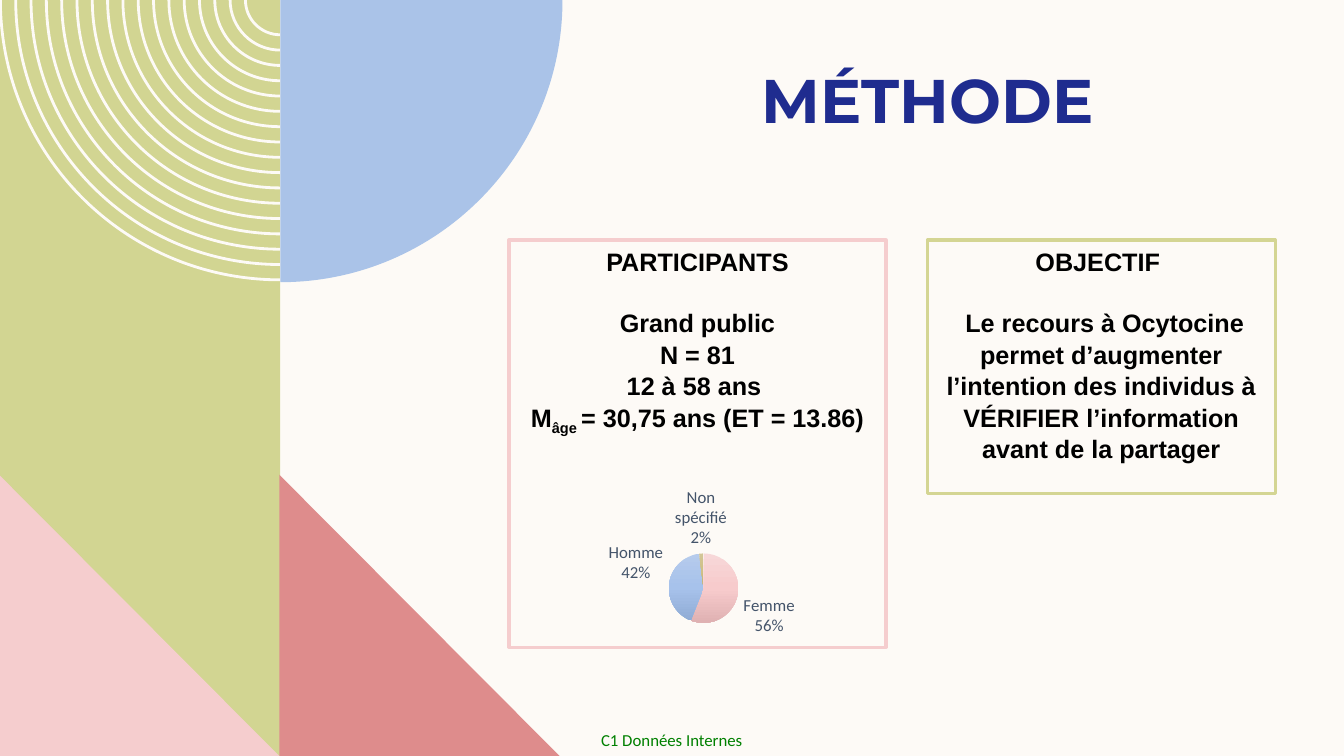
from copy import deepcopy
from dataclasses import dataclass

from lxml.etree import SubElement
from pptx import Presentation
from pptx.chart.data import CategoryChartData
from pptx.dml.color import RGBColor
from pptx.enum.chart import XL_CHART_TYPE, XL_LABEL_POSITION
from pptx.enum.shapes import MSO_SHAPE
from pptx.enum.text import MSO_ANCHOR, PP_ALIGN
from pptx.oxml.ns import qn
from pptx.util import Pt


@dataclass(frozen=True)
class Theme:
    cream: str = "FDFAF6"
    olive: str = "D2D592"
    olive_border: str = "D4D593"
    blue: str = "AAC3E8"
    rose: str = "DE8C8C"
    pink: str = "F5CDCE"
    navy: str = "1F2C8F"
    black: str = "000000"
    green: str = "008000"
    slate: str = "44546A"
    slices: tuple = (
        ("F7D7D8", "F7CBCC", "DFB1B2"),
        ("B6CBEC", "A7C2EB", "90ACD5"),
        ("D2C697", "CFC086", "BCAD73"),
    )
    title_font: str = "Montserrat"
    body_font: str = "Arial"
    label_font: str = "Calibri"
    title_size: int = 44
    body_size: int = 18
    label_size: int = 12
    chart_size: int = 10


class SlideBuilder:
    def __init__(self, slide, theme):
        self.slide = slide
        self.theme = theme
        slide.background.fill.solid()
        slide.background.fill.fore_color.rgb = RGBColor.from_string(theme.cream)

    def set_font(self, font, name, size, color, bold=False):
        font.name = name
        font.size = Pt(size)
        font.bold = bold
        font.color.rgb = RGBColor.from_string(color)

    def paint(self, shape, color):
        shape.shadow.inherit = False
        shape.fill.solid()
        shape.fill.fore_color.rgb = RGBColor.from_string(color)
        shape.line.fill.background()

    def block(self, preset, left, top, width, height, color):
        shape = self.slide.shapes.add_shape(
            preset, Pt(left), Pt(top), Pt(width), Pt(height))
        self.paint(shape, color)

    def round_segment(self, line, vertical_first):
        start, end = (
            (int(point.get("x")), int(point.get("y")))
            for point in (line.getprevious()[-1], line[0]))
        corner = (start[0], end[1]) if vertical_first else (end[0], start[1])
        controls = [
            tuple(a + 0.5523 * (b - a) for a, b in zip(anchor, corner))
            for anchor in (start, end)
        ]
        curve = line.makeelement(qn("a:cubicBezTo"))
        for x, y in controls + [end]:
            SubElement(curve, qn("a:pt"), x=str(round(x)), y=str(round(y)))
        line.getparent().replace(line, curve)

    def quarter_rings(self, center_x, direction, rings, color):
        builder = None
        for outer, inner in rings:
            start, *rest = [
                (Pt(center_x + direction * across), Pt(down))
                for across, down in ((outer, 0), (0, outer), (0, inner), (inner, 0))
            ]
            if builder is None:
                builder = self.slide.shapes.build_freeform(*start)
            else:
                builder.move_to(*start)
            builder.add_line_segments(rest)
        shape = builder.convert_to_shape()
        for index, line in enumerate(list(shape._element.iter(qn("a:lnTo")))):
            if index % 3 != 1:
                self.round_segment(line, index % 3 == 0)
        self.paint(shape, color)

    def title(self, text, left, top, width, height):
        shape = self.slide.shapes.title
        shape.left, shape.top = Pt(left), Pt(top)
        shape.width, shape.height = Pt(width), Pt(height)
        frame = shape.text_frame
        frame.text = text
        frame.vertical_anchor = MSO_ANCHOR.TOP
        paragraph = frame.paragraphs[0]
        paragraph.alignment = PP_ALIGN.CENTER
        self.set_font(paragraph.font, self.theme.title_font, self.theme.title_size,
                      self.theme.navy, True)

    def card(self, left, top, width, height, border, lines):
        shape = self.slide.shapes.add_shape(
            MSO_SHAPE.RECTANGLE, Pt(left), Pt(top), Pt(width), Pt(height))
        shape.shadow.inherit = False
        shape.fill.background()
        shape.line.color.rgb = RGBColor.from_string(border)
        shape.line.width = Pt(2.25)
        frame = shape.text_frame
        frame.word_wrap = True
        frame.vertical_anchor = MSO_ANCHOR.TOP
        for index, runs in enumerate(lines):
            paragraph = frame.add_paragraph() if index else frame.paragraphs[0]
            paragraph.alignment = PP_ALIGN.CENTER
            paragraph.line_spacing = 1.04
            if index == 1:
                paragraph.space_before = Pt(21.6)
            self.set_font(paragraph.font, self.theme.body_font, self.theme.body_size,
                          self.theme.black, True)
            for text, baseline in runs:
                run = paragraph.add_run()
                run.text = text
                if baseline:
                    run.font._element.set("baseline", str(baseline))

    def footer(self, text, left, top, width, height):
        shape = self.slide.shapes.add_textbox(Pt(left), Pt(top), Pt(width), Pt(height))
        frame = shape.text_frame
        frame.margin_left = frame.margin_right = 0
        frame.margin_top = frame.margin_bottom = 0
        frame.vertical_anchor = MSO_ANCHOR.MIDDLE
        frame.word_wrap = False
        frame.text = text
        paragraph = frame.paragraphs[0]
        paragraph.alignment = PP_ALIGN.CENTER
        self.set_font(paragraph.font, self.theme.label_font, self.theme.label_size,
                      self.theme.green)

    def pie(self, left, top, width, height, shares):
        data = CategoryChartData()
        data.categories = list(shares)
        data.add_series("Series 1", list(shares.values()))
        chart = self.slide.shapes.add_chart(
            XL_CHART_TYPE.PIE, Pt(left), Pt(top), Pt(width), Pt(height), data).chart
        chart.has_legend = False
        chart.has_title = False
        self.set_font(chart.font, self.theme.label_font, self.theme.chart_size,
                      self.theme.black)
        plot = chart.plots[0]
        plot.vary_by_categories = True
        for index, colors in enumerate(self.theme.slices):
            fill = plot.series[0].points[index].format.fill
            fill.gradient()
            fill.gradient_angle = 270
            first_stop = fill.gradient_stops[0]._gs
            first_stop.addnext(deepcopy(first_stop))
            for stop, position, color in zip(fill.gradient_stops, (0, 0.5, 1), colors):
                stop.position = position
                stop.color.rgb = RGBColor.from_string(color)
        plot.has_data_labels = True
        labels = plot.data_labels
        labels.show_category_name = True
        labels.show_percentage = True
        labels.show_value = False
        labels.number_format = "0%"
        labels.number_format_is_linked = False
        labels.position = XL_LABEL_POSITION.OUTSIDE_END
        self.set_font(labels.font, self.theme.label_font, self.theme.label_size,
                      self.theme.slate)
        element = labels._element
        separator = SubElement(element, qn("c:separator"))
        separator.text = "\n"
        element.find(qn("c:showBubbleSize")).addnext(separator)


def main():
    theme = Theme()
    presentation = Presentation()
    presentation.slide_width, presentation.slide_height = Pt(960), Pt(540)
    builder = SlideBuilder(
        presentation.slides.add_slide(presentation.slide_layouts[5]), theme)
    builder.block(MSO_SHAPE.RECTANGLE, -0.7, 0, 200.9, 540, theme.olive)
    radii = [200.9 - 10.94 * index for index in range(17)]
    builder.quarter_rings(200.2, -1, [(radius, radius - 2) for radius in radii], theme.cream)
    builder.quarter_rings(200.2, 1, [(201.6, 0)], theme.blue)
    for left, color in ((199.5, theme.rose), (-0.7, theme.pink)):
        builder.block(MSO_SHAPE.RIGHT_TRIANGLE, left, 339.1, 200.9, 201.6, color)
    builder.title("MÉTHODE", 386.6, 40.3, 552.2, 105.8)
    builder.card(363.6, 171.4, 269.3, 290.9, theme.pink, [
        *([(text, 0)] for text in ("PARTICIPANTS", "Grand public", "N = 81", "12 à 58 ans ")),
        [("M", 0), ("âge ", -25000), ("= 30,75 ans (ET = 13.86)", 0)],
    ])
    builder.card(662.4, 171.4, 248.4, 181.4, theme.olive_border, [
        [("OBJECTIF ", 0)],
        [(" Le recours à Ocytocine permet d’augmenter l’intention des individus à "
          "VÉRIFIER l’information avant de la partager", 0)],
    ])
    builder.pie(363.6, 338.4, 269.3, 138.2, {"Femme": 56, "Homme": 42, "Non spécifié": 2})
    builder.footer("C1 Données Internes", 416.2, 517, 127.4, 23)
    presentation.save("out.pptx")


if __name__ == "__main__":
    main()
